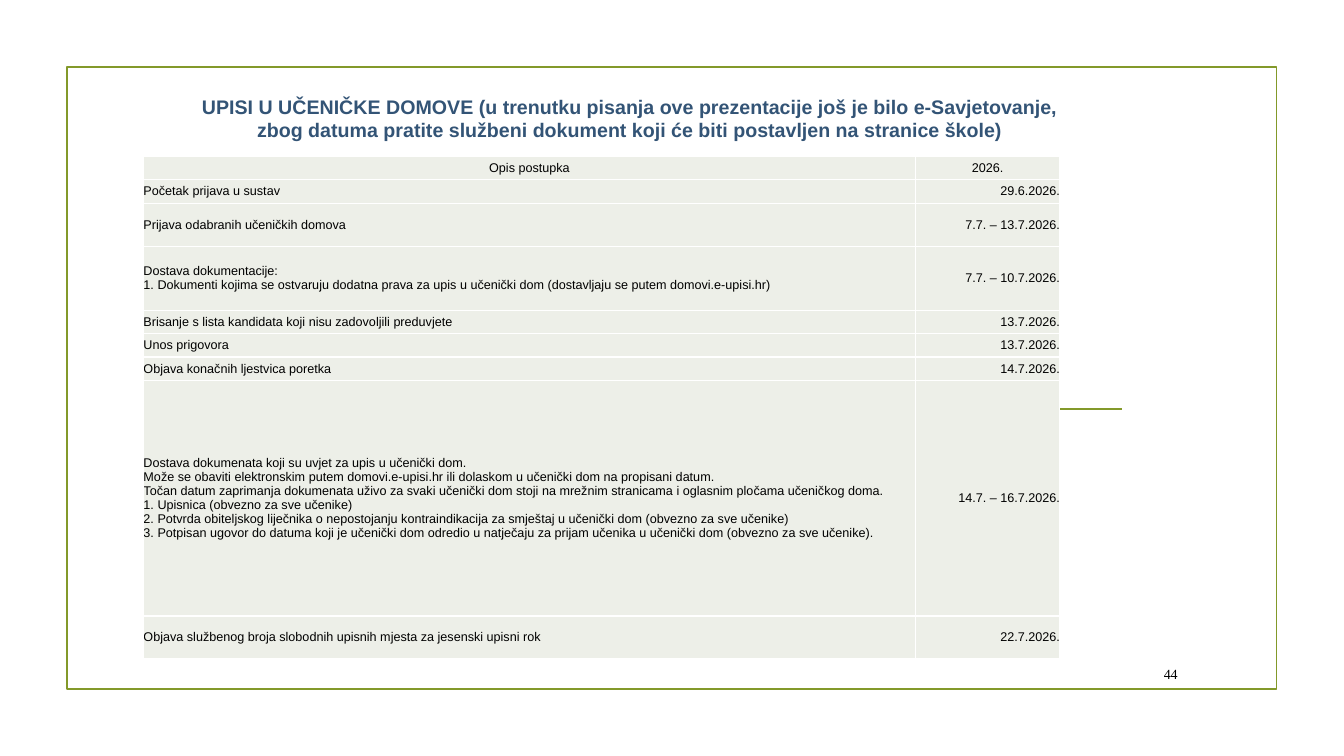
from lxml import etree
from pptx import Presentation
from pptx import util as u
from pptx.dml.color import RGBColor
from pptx.enum import shapes, text
from pptx.oxml import ns

Pt = u.Pt
OLIVE = RGBColor(0x83, 0x99, 0x2A)
NAVY = RGBColor(0x33, 0x54, 0x76)
BLACK = RGBColor(0, 0, 0)
WHITE = RGBColor(0xFF, 0xFF, 0xFF)
CELL_FILL = RGBColor(0xED, 0xEF, 0xE8)
LEFT, CENTER, RIGHT = text.PP_ALIGN.LEFT, text.PP_ALIGN.CENTER, text.PP_ALIGN.RIGHT

# Description, date, row height
STEPS = [
    ("Opis postupka", "2026.", 16.7),
    ("Početak prijava u sustav", "29.6.2026.", 16.7),
    ("Prijava odabranih učeničkih domova", "7.7. – 13.7.2026.", 30.7),
    ("Dostava dokumentacije:\n"
     "1. Dokumenti kojima se ostvaruju dodatna prava za upis u učenički dom "
     "(dostavljaju se putem domovi.e-upisi.hr)", "7.7. – 10.7.2026.", 45.8),
    ("Brisanje s lista kandidata koji nisu zadovoljili preduvjete", "13.7.2026.", 16.7),
    ("Unos prigovora", "13.7.2026.", 16.7),
    ("Objava konačnih ljestvica poretka", "14.7.2026.", 16.7),
    ("Dostava dokumenata koji su uvjet za upis u učenički dom.\n"
     "Može se obaviti elektronskim putem domovi.e-upisi.hr ili dolaskom u učenički dom "
     "na propisani datum.\n"
     "Točan datum zaprimanja dokumenata uživo za svaki učenički dom stoji na mrežnim "
     "stranicama i oglasnim pločama učeničkog doma.\n"
     "1. Upisnica (obvezno za sve učenike)\n"
     "2. Potvrda obiteljskog liječnika o nepostojanju kontraindikacija za smještaj u "
     "učenički dom (obvezno za sve učenike)\n"
     "3. Potpisan ugovor do datuma koji je učenički dom odredio u natječaju za prijam "
     "učenika u učenički dom (obvezno za sve učenike).", "14.7. – 16.7.2026.", 168.2),
    ("Objava službenog broja slobodnih upisnih mjesta za jesenski upisni rok",
     "22.7.2026.", 30.7),
]


def style(para, size, face, color, align, bold=False):
    para.alignment = align
    para.font.size = Pt(size)
    para.font.name = face
    para.font.bold = bold
    para.font.color.rgb = color


def add_label(page, place, words, size, face, color, bold=False):
    box = page.shapes.add_textbox(*map(Pt, place))
    box.text_frame.word_wrap = True
    box.text_frame.text = words
    style(box.text_frame.paragraphs[0], size, face, color, CENTER, bold)
    return box


deck = Presentation()
deck.slide_width, deck.slide_height = Pt(960), Pt(540)
page = deck.slides.add_slide(deck.slide_layouts[6])

# Frame
frame = page.shapes.add_shape(shapes.MSO_SHAPE.RECTANGLE, Pt(47.8), Pt(48), Pt(864), Pt(444.2))
frame.shadow.inherit = False
frame.fill.background()
frame.line.color.rgb = OLIVE
frame.line.width = Pt(1.25)

# Rule running behind the table
rule = page.shapes.add_connector(
    shapes.MSO_CONNECTOR.STRAIGHT, Pt(158.4), Pt(292), Pt(801.4), Pt(292))
rule.line.color.rgb = OLIVE
rule.line.width = Pt(1.25)
etree.SubElement(rule.element.spPr, ns.qn("a:effectLst"))

# Page number and title
number = add_label(page, (815, 470.2, 42.5, 22.3), "44", 10, "Times New Roman", BLACK)
number.text_frame.vertical_anchor = text.MSO_ANCHOR.MIDDLE
add_label(page, (124.6, 64.1, 650.9, 41),
          "UPISI U UČENIČKE DOMOVE (u trenutku pisanja ove prezentacije još je bilo "
          "e-Savjetovanje, zbog datuma pratite službeni dokument koji će biti postavljen "
          "na stranice škole)", 14, "Arial", NAVY, bold=True)

# Table of enrolment steps
table = page.shapes.add_table(
    len(STEPS), 2, Pt(102.5), Pt(111.8), Pt(654.6), Pt(358.9)).table
table.columns[0].width, table.columns[1].width = Pt(551.4), Pt(103.2)
for row, (description, date, height) in enumerate(STEPS):
    table.rows[row].height = Pt(height)
    for column, words in enumerate((description, date)):
        cell = table.cell(row, column)
        cell.margin_left = cell.margin_right = cell.margin_top = cell.margin_bottom = 0
        cell.vertical_anchor = text.MSO_ANCHOR.MIDDLE
        cell.text = words
        align = CENTER if row == 0 else (LEFT, RIGHT)[column]
        for para in cell.text_frame.paragraphs:
            style(para, 9, "Arial", BLACK, align)
        properties = cell._tc.get_or_add_tcPr()
        for side in ("a:lnL", "a:lnR", "a:lnT", "a:lnB"):
            border = etree.SubElement(properties, ns.qn(side), w=str(Pt(1)))
            paint = etree.SubElement(border, ns.qn("a:solidFill"))
            etree.SubElement(paint, ns.qn("a:srgbClr"), val=str(WHITE))
        cell.fill.solid()
        cell.fill.fore_color.rgb = CELL_FILL

deck.save("out.pptx")
